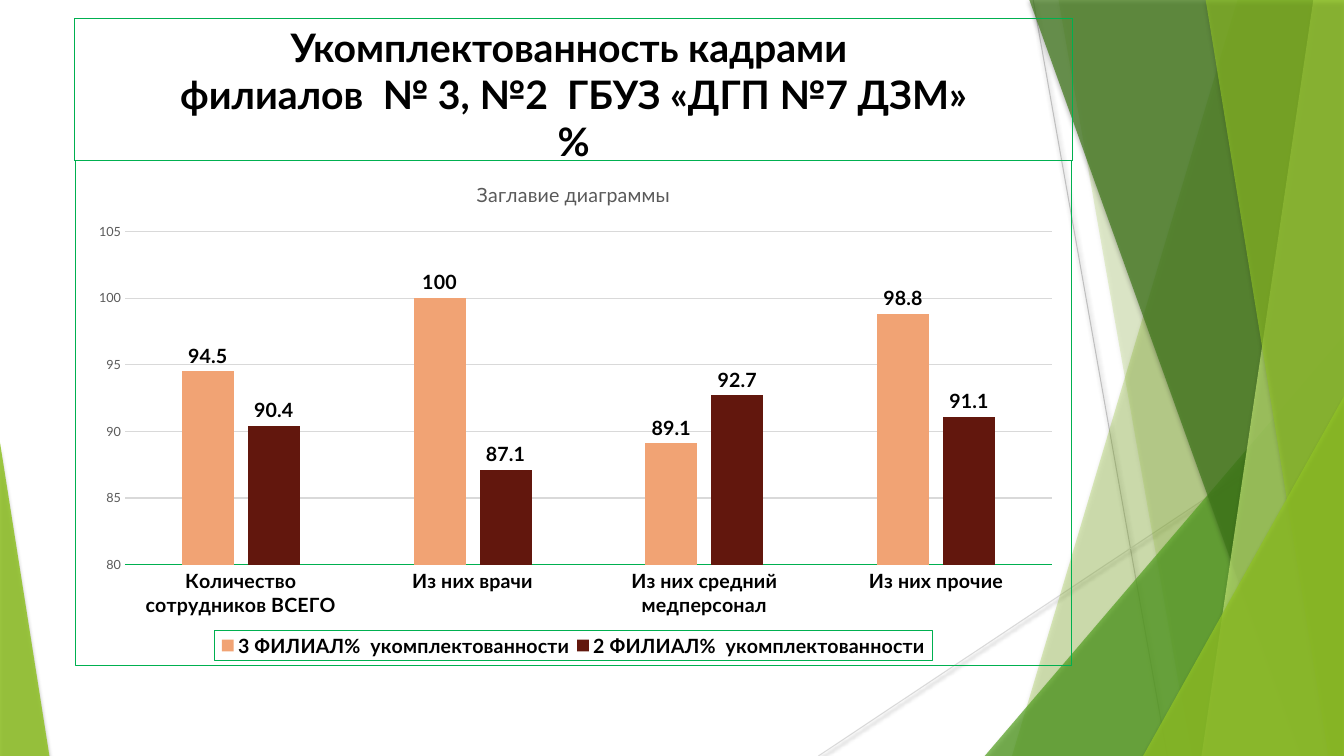
from lxml.etree import SubElement
from pptx import Presentation
from pptx.chart.data import CategoryChartData
from pptx.dml.color import RGBColor
from pptx.enum.chart import XL_CHART_TYPE, XL_LABEL_POSITION, XL_LEGEND_POSITION, XL_TICK_MARK
from pptx.enum.shapes import MSO_CONNECTOR, MSO_SHAPE
from pptx.enum.text import MSO_ANCHOR, MSO_AUTO_SIZE, PP_ALIGN
from pptx.oxml import parse_xml
from pptx.oxml.ns import nsdecls, qn
from pptx.util import Pt

BLACK = RGBColor(0x00, 0x00, 0x00)
GREY = RGBColor(0x59, 0x59, 0x59)
SILVER = RGBColor(0xBF, 0xBF, 0xBF)
PALE = RGBColor(0xD9, 0xD9, 0xD9)
FRAME_GREEN = RGBColor(0x00, 0xB0, 0x50)
LIME = RGBColor(0x90, 0xC2, 0x26)
LIGHT_LIME = RGBColor(0xC0, 0xE4, 0x74)
LEAF = RGBColor(0x54, 0xA0, 0x21)
FOREST = RGBColor(0x3F, 0x78, 0x19)
PEACH = RGBColor(0xF1, 0xA3, 0x74)
MAROON = RGBColor(0x62, 0x17, 0x0D)

WIDTH, HEIGHT = 960, 540
TOP = -0.6  # top edge of the background ribbons


def set_font(font, size, color=BLACK, bold=False, name="Lato"):
    font.name, font.size, font.bold = name, Pt(size), bold
    font.color.rgb = color


def write(frame, text, align=PP_ALIGN.CENTER, **style):
    frame.text = text
    for paragraph in frame.paragraphs:
        paragraph.alignment = align
        for run in paragraph.runs:
            set_font(run.font, **style)


def add_shadow(shape, opacity, blur, distance):
    shape._element.spPr.append(parse_xml(
        f'<a:effectLst {nsdecls("a")}><a:outerShdw blurRad="{Pt(blur)}" dist="{Pt(distance)}" '
        f'dir="5400000" rotWithShape="0"><a:srgbClr val="000000"><a:alpha val="{opacity * 1000}"/>'
        '</a:srgbClr></a:outerShdw></a:effectLst>'))


def border_xml(color):
    return parse_xml(
        f'<c:spPr {nsdecls("c", "a")}><a:noFill/><a:ln w="{Pt(0.75)}"><a:solidFill>'
        f'<a:srgbClr val="{color}"/></a:solidFill></a:ln></c:spPr>')


def layout_xml(x, y, w, h, inner=False):
    target = '<c:layoutTarget val="inner"/>' if inner else ""
    return parse_xml(
        f'<c:layout {nsdecls("c")}><c:manualLayout>{target}<c:xMode val="edge"/>'
        f'<c:yMode val="edge"/><c:x val="{x}"/><c:y val="{y}"/><c:w val="{w}"/>'
        f'<c:h val="{h}"/></c:manualLayout></c:layout>')


class StaffingSlide:
    def __init__(self, presentation):
        self.slide = presentation.slides.add_slide(presentation.slide_layouts[5])
        self.shapes = self.slide.shapes

    def ray(self, start, end, color):
        ray = self.shapes.add_connector(MSO_CONNECTOR.STRAIGHT, *map(Pt, start + end))
        ray.line.color.rgb = color
        ray.line.width = Pt(0.75)
        add_shadow(ray, 38, 3.1, 1.6)

    def tint(self, shape, color, opacity):
        shape.fill.solid()
        shape.fill.fore_color.rgb = color
        shape.line.fill.background()
        swatch = shape._element.spPr.find(qn("a:solidFill"))[0]
        SubElement(swatch, qn("a:alpha")).set("val", str(opacity * 1000))
        add_shadow(shape, 35, 3, 2)

    def ribbon(self, top_x, bottom_x, color, opacity):
        builder = self.shapes.build_freeform(Pt(top_x), Pt(TOP))
        corners = [(WIDTH, TOP), (WIDTH, HEIGHT), (bottom_x, HEIGHT)]
        builder.add_line_segments([(Pt(x), Pt(y)) for x, y in corners], close=True)
        self.tint(builder.convert_to_shape(), color, opacity)

    def corner(self, left, top, width, apex, color, opacity):
        triangle = self.shapes.add_shape(MSO_SHAPE.ISOSCELES_TRIANGLE, Pt(left), Pt(top),
                                         Pt(width), Pt(HEIGHT - top))
        triangle.adjustments[0] = apex
        self.tint(triangle, color, opacity)

    def title(self, text, left, top, width, height):
        title = self.shapes.title
        title._element.getparent().append(title._element)  # bring to front
        title.left, title.top, title.width, title.height = map(Pt, (left, top, width, height))
        title.line.color.rgb = FRAME_GREEN
        title.line.width = Pt(0)
        frame = title.text_frame
        frame.word_wrap = True
        frame.auto_size = MSO_AUTO_SIZE.NONE
        frame.vertical_anchor = MSO_ANCHOR.TOP
        write(frame, text, size=28, bold=True)

    def chart(self, heading, categories, branches, left, top, width, height):
        data = CategoryChartData()
        data.categories = categories
        for name, values, _ in branches:
            data.add_series(name, values)
        chart = self.shapes.add_chart(XL_CHART_TYPE.COLUMN_CLUSTERED, Pt(left), Pt(top),
                                      Pt(width), Pt(height), data).chart
        set_font(chart.font, 10, name="Arial")
        chart.has_title = True
        write(chart.chart_title.text_frame, heading, size=14, color=GREY)
        chart.chart_title.include_in_layout = False

        # Columns and their values
        plot = chart.plots[0]
        plot.gap_width, plot.overlap, plot.vary_by_categories = 219, -27, False
        for series, (_, _, color) in zip(plot.series, branches):
            series.format.fill.solid()
            series.format.fill.fore_color.rgb = color
            labels = series.data_labels
            labels.show_value = True
            labels.position = XL_LABEL_POSITION.OUTSIDE_END
            set_font(labels.font, 14, bold=True)

        # Axes
        group_axis, percent_axis = chart.category_axis, chart.value_axis
        for axis in (group_axis, percent_axis):
            axis.major_tick_mark = axis.minor_tick_mark = XL_TICK_MARK.NONE
        set_font(group_axis.tick_labels.font, 14, bold=True)
        group_axis.format.line.color.rgb = FRAME_GREEN
        group_axis.format.line.width = Pt(0.75)
        set_font(percent_axis.tick_labels.font, 9, GREY)
        percent_axis.minimum_scale, percent_axis.maximum_scale = 80, 105
        percent_axis.major_unit = 5
        percent_axis.format.line.fill.background()
        percent_axis.major_gridlines.format.line.color.rgb = PALE
        percent_axis.major_gridlines.format.line.width = Pt(0.75)

        # Legend, borders and inner layout
        chart.has_legend = True
        legend = chart.legend
        legend.position = XL_LEGEND_POSITION.BOTTOM
        legend.include_in_layout = False
        set_font(legend.font, 14, bold=True)
        legend_xml = legend._element
        for old in legend_xml.findall(qn("c:layout")):
            legend_xml.remove(old)
        legend_xml.find(qn("c:legendPos")).addnext(layout_xml(0.14, 0.93, 0.72, 0.06))
        legend_xml.find(qn("c:txPr")).addprevious(border_xml(FRAME_GREEN))
        space = chart._chartSpace
        space.find(qn("c:chart")).addnext(border_xml(FRAME_GREEN))
        area = space.find(qn("c:chart")).find(qn("c:plotArea"))
        for old in area.findall(qn("c:layout")):
            area.remove(old)
        area.insert(0, layout_xml(0.05, 0.14, 0.93, 0.66, inner=True))


def main():
    presentation = Presentation()
    presentation.slide_width, presentation.slide_height = Pt(WIDTH), Pt(HEIGHT)
    staffing = StaffingSlide(presentation)

    # Green background
    staffing.ray((738, 0), (833.8, HEIGHT), SILVER)
    staffing.ray((WIDTH, 290.2), (584.6, HEIGHT), PALE)
    staffing.ribbon(884.2, 722.9, LIME, 30)
    staffing.ribbon(756, 851, LIME, 20)
    staffing.corner(703.4, 239.8, 256.6, 1, LEAF, 72)
    staffing.ribbon(735.1, 929.5, FOREST, 70)
    staffing.ribbon(938.2, 858.2, LIGHT_LIME, 70)
    staffing.ribbon(861.1, 949, LIME, 65)
    staffing.corner(816.5, 283, 143.5, 1, LIME, 80)
    staffing.corner(0, 316.1, 35.3, 0, LIME, 85)

    # Title and staffing levels
    staffing.title("Укомплектованность кадрами \vфилиалов  № 3, №2  ГБУЗ «ДГП №7 ДЗМ»\v%",
                   53.3, 13, 712.8, 101.5)
    staffing.chart(
        "Заглавие диаграммы",
        ["Количество сотрудников ВСЕГО", "Из них врачи",
         "Из них средний медперсонал", "Из них прочие"],
        [("3 ФИЛИАЛ%  укомплектованности", (94.5, 100, 89.1, 98.8), PEACH),
         ("2 ФИЛИАЛ%  укомплектованности", (90.4, 87.1, 92.7, 91.1), MAROON)],
        53.3, 114.5, 712.8, 361.4)
    presentation.save("out.pptx")


if __name__ == "__main__":
    main()
